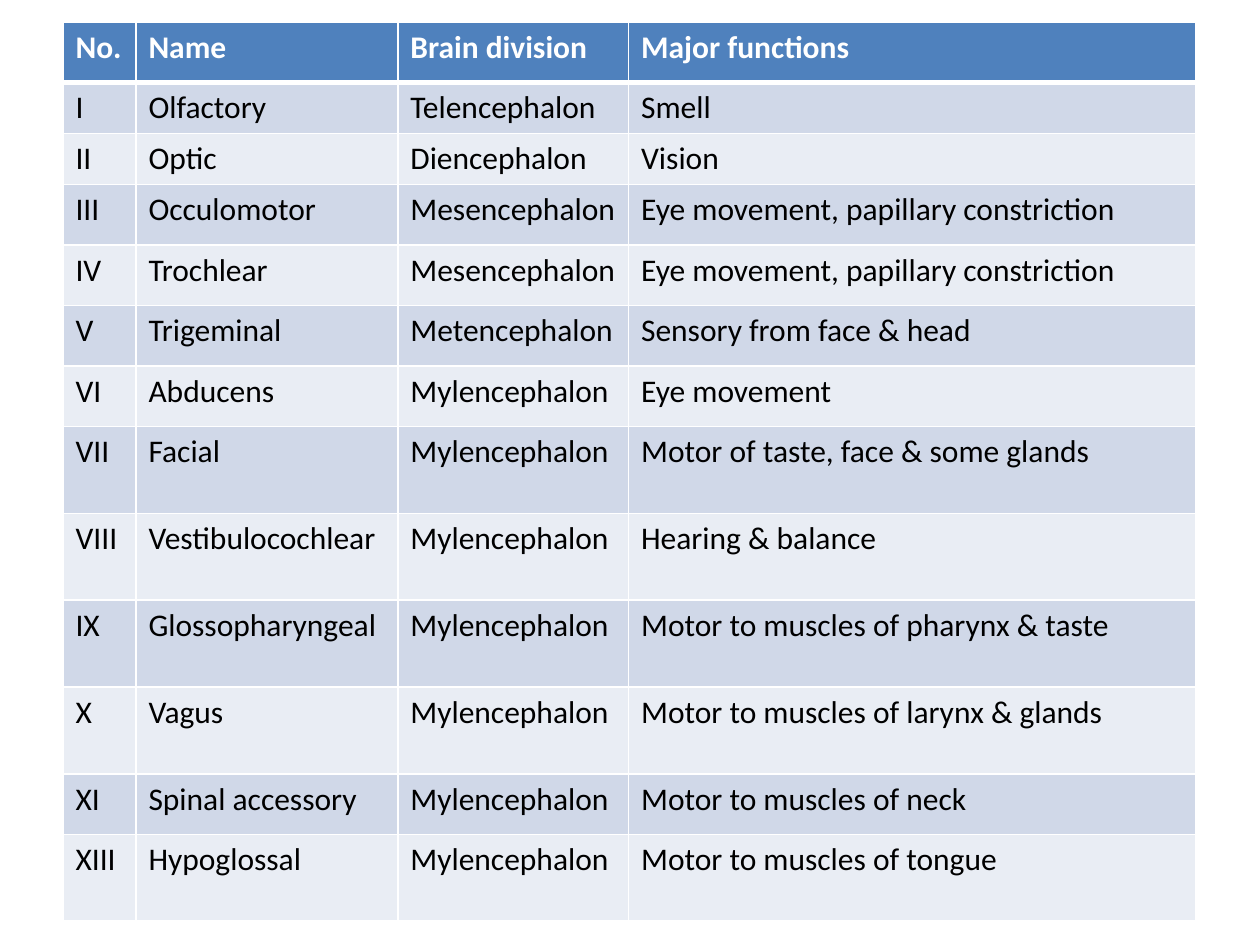
"""Build a slide with a table of the cranial nerves."""
from typing import NamedTuple

from lxml.etree import SubElement
from pptx import Presentation
from pptx.dml.color import RGBColor
from pptx.oxml.ns import qn
from pptx.util import Cm, Pt

COLOURS = {
    "header": "4F81BD",
    "odd": "D0D8E8",
    "even": "E9EDF4",
    "line": "FFFFFF",
    "header_text": "FFFFFF",
    "body_text": "000000",
}
HEADINGS = ("No.", "Name", "Brain division", "Major functions")
COLUMN_WIDTHS = (1.47, 5.28, 4.65, 11.43)
COMPACT, MEDIUM, TALL = 1.0, 1.22, 1.75
THIN, THICK = 1, 3


class Nerve(NamedTuple):
    number: str
    name: str
    division: str
    functions: str
    height: float


NERVES = (
    Nerve("I", "Olfactory", "Telencephalon", "Smell", COMPACT),
    Nerve("II", "Optic", "Diencephalon", "Vision", COMPACT),
    Nerve("III", "Occulomotor", "Mesencephalon", "Eye movement, papillary constriction", MEDIUM),
    Nerve("IV", "Trochlear", "Mesencephalon", "Eye movement, papillary constriction", MEDIUM),
    Nerve("V", "Trigeminal", "Metencephalon", "Sensory from face & head", MEDIUM),
    Nerve("VI", "Abducens", "Mylencephalon", "Eye movement", MEDIUM),
    Nerve("VII", "Facial", "Mylencephalon", "Motor of taste, face & some glands", TALL),
    Nerve("VIII", "Vestibulocochlear", "Mylencephalon", "Hearing & balance", TALL),
    Nerve("IX", "Glossopharyngeal", "Mylencephalon", "Motor to muscles of pharynx & taste", TALL),
    Nerve("X", "Vagus", "Mylencephalon", "Motor to muscles of larynx & glands", TALL),
    Nerve("XI", "Spinal accessory", "Mylencephalon", "Motor to muscles of neck", MEDIUM),
    Nerve("XIII", "Hypoglossal", "Mylencephalon", "Motor to muscles of tongue", TALL),
)


def write_text(cell, text: str, *, colour: str, bold: bool = False, size: int = 18) -> None:
    span = cell.text_frame.paragraphs[0].add_run()
    span.text = text
    span.font.name = "Calibri"
    span.font.size = Pt(size)
    span.font.bold = bold
    span.font.color.rgb = RGBColor.from_string(colour)


def draw_borders(cell, *, top: int = THIN, bottom: int = THIN) -> None:
    properties = cell._tc.get_or_add_tcPr()
    for side, width in (("L", THIN), ("R", THIN), ("T", top), ("B", bottom)):
        line = SubElement(properties, qn(f"a:ln{side}"), w=str(Pt(width)))
        fill = SubElement(line, qn("a:solidFill"))
        SubElement(fill, qn("a:srgbClr"), val=COLOURS["line"])


def fill_cell(cell, colour: str) -> None:
    cell.fill.solid()
    cell.fill.fore_color.rgb = RGBColor.from_string(colour)


def draw_header(table) -> None:
    table.rows[0].height = Cm(MEDIUM)
    for cell, heading in zip(table.rows[0].cells, HEADINGS):
        write_text(cell, heading, colour=COLOURS["header_text"], bold=True)
        draw_borders(cell, bottom=THICK)
        fill_cell(cell, COLOURS["header"])


def draw_nerve(table, position: int, nerve: Nerve) -> None:
    row = table.rows[position]
    row.height = Cm(nerve.height)
    band = COLOURS["odd" if position % 2 else "even"]
    for cell, text in zip(row.cells, nerve[:4]):
        write_text(cell, text, colour=COLOURS["body_text"])
        draw_borders(cell, top=THICK if position == 1 else THIN)
        fill_cell(cell, band)


def main() -> None:
    deck = Presentation()
    deck.slide_width, deck.slide_height = Cm(25.4), Cm(19.05)
    page = deck.slides.add_slide(deck.slide_layouts[6])
    height = MEDIUM + sum(nerve.height for nerve in NERVES)
    table = page.shapes.add_table(
        len(NERVES) + 1, len(HEADINGS),
        Cm(1.27), Cm(0.44), Cm(sum(COLUMN_WIDTHS)), Cm(height),
    ).table
    for column, width in zip(table.columns, COLUMN_WIDTHS):
        column.width = Cm(width)
    draw_header(table)
    for position, nerve in enumerate(NERVES, start=1):
        draw_nerve(table, position, nerve)
    deck.save("out.pptx")


if __name__ == "__main__":
    main()
